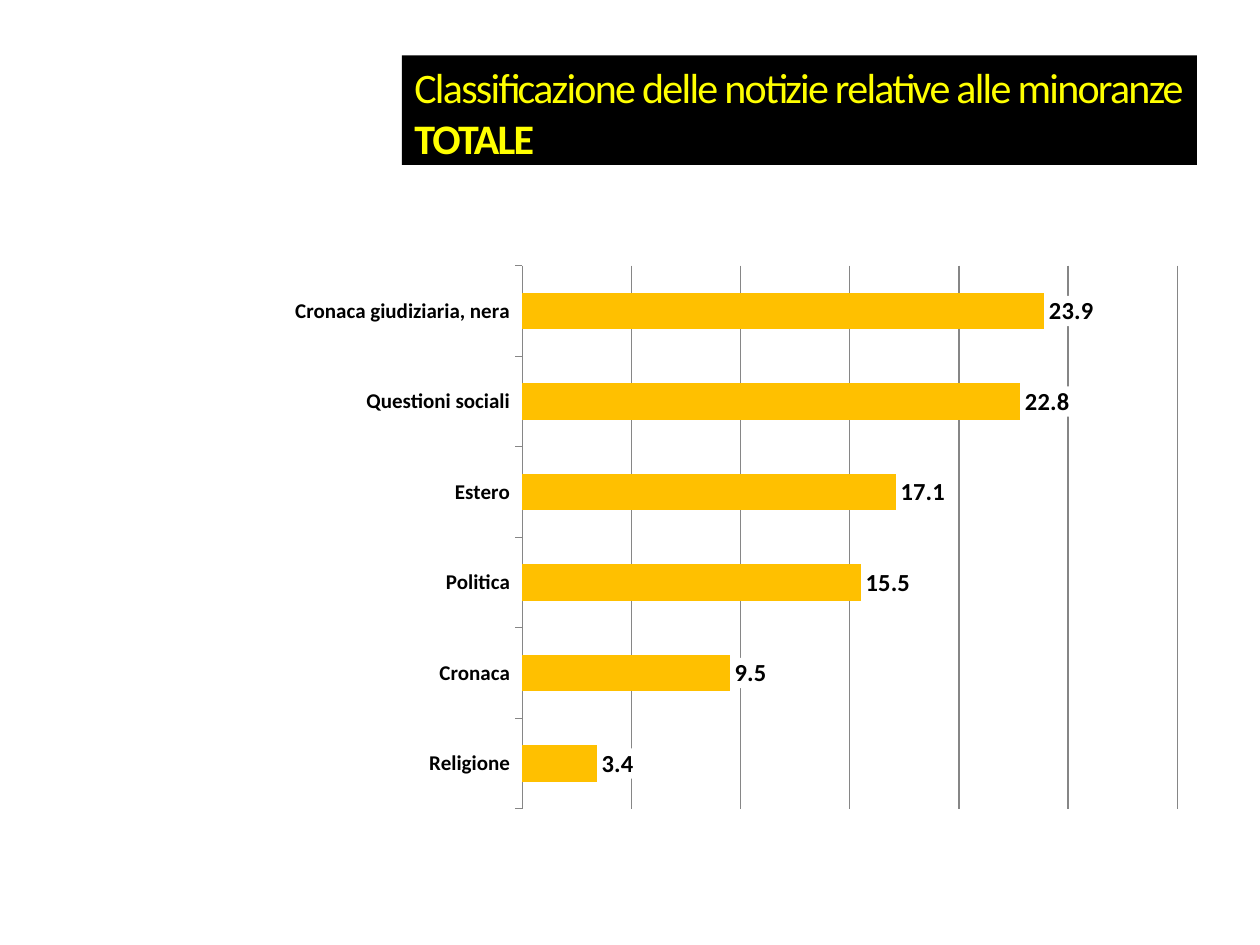
from dataclasses import dataclass

from lxml import etree
from pptx import Presentation
from pptx.chart.data import CategoryChartData
from pptx.dml.color import RGBColor
from pptx.enum.chart import XL_CHART_TYPE as ChartType
from pptx.enum.chart import XL_LABEL_POSITION as LabelPosition
from pptx.enum.chart import XL_TICK_MARK as TickMark
from pptx.enum.shapes import MSO_SHAPE as ShapeType
from pptx.enum.text import MSO_ANCHOR as Anchor
from pptx.enum.text import PP_ALIGN as Align
from pptx.oxml import parse_xml
from pptx.oxml.ns import nsdecls, qn
from pptx.util import Inches, Pt


@dataclass(frozen=True)
class Theme:
    font: str = "Calibri"
    black: RGBColor = RGBColor(0, 0, 0)
    yellow: RGBColor = RGBColor(255, 255, 0)
    amber: RGBColor = RGBColor(255, 192, 0)
    grey: RGBColor = RGBColor(134, 134, 134)
    label_fill: str = "FFFFFF"
    title_size: Pt = Pt(24)
    chart_size: Pt = Pt(10)
    category_size: Pt = Pt(12)
    value_size: Pt = Pt(14)
    hairline: Pt = Pt(0.75)


THEME = Theme()
NEWS_SHARES = {
    "Cronaca giudiziaria, nera": 23.9,
    "Questioni sociali": 22.8,
    "Estero": 17.1,
    "Politica": 15.5,
    "Cronaca": 9.5,
    "Religione": 3.4,
}


def add_title(slide, box):
    banner = slide.shapes.add_shape(ShapeType.RECTANGLE, *box)
    banner.shadow.inherit = False
    banner.fill.solid()
    banner.fill.fore_color.rgb = THEME.black
    banner.line.fill.background()
    frame = banner.text_frame
    frame.word_wrap = True
    frame.vertical_anchor = Anchor.TOP
    frame.margin_right = 0
    paragraph = frame.paragraphs[0]
    paragraph.text = "Classificazione delle notizie relative alle minoranze\vTOTALE"
    paragraph.alignment = Align.LEFT
    for run in paragraph.runs:
        run.font.name = THEME.font
        run.font.size = THEME.title_size
        run.font.color.rgb = THEME.yellow
        run.font._element.set("spc", "-100")
    paragraph.runs[-1].font.bold = True


def set_plot_layout(chart, **fractions):
    """Fix the inner plot area as fractions of the chart's box."""
    plot_area = chart._chartSpace.chart.plotArea
    for old_layout in plot_area.findall(qn("c:layout")):
        plot_area.remove(old_layout)
    layout = etree.Element(qn("c:layout"))
    manual = etree.SubElement(layout, qn("c:manualLayout"))
    settings = {"layoutTarget": "inner", "xMode": "edge", "yMode": "edge", **fractions}
    for name, value in settings.items():
        etree.SubElement(manual, qn(f"c:{name}")).set("val", str(value))
    plot_area.insert(0, layout)


def format_value_labels(plot):
    plot.has_data_labels = True
    labels = plot.data_labels
    labels.show_value = True
    labels.number_format = "0.0"
    labels.number_format_is_linked = False
    labels.position = LabelPosition.OUTSIDE_END
    labels.font.name = THEME.font
    labels.font.size = THEME.value_size
    labels.font.bold = True
    labels.font.color.rgb = THEME.black
    fill = parse_xml(
        f'<c:spPr {nsdecls("c", "a")}><a:solidFill>'
        f'<a:srgbClr val="{THEME.label_fill}"/></a:solidFill></c:spPr>'
    )
    labels._element.find(qn("c:txPr")).addprevious(fill)


def format_axes(chart):
    categories = chart.category_axis
    categories.reverse_order = True
    categories.major_tick_mark = TickMark.OUTSIDE
    categories.tick_labels.font.size = THEME.category_size
    categories.tick_labels.font.bold = True
    values = chart.value_axis
    values.minimum_scale = 0
    values.maximum_scale = 30
    values.major_unit = 5
    values.tick_labels.number_format = "0.0"
    values.tick_labels.number_format_is_linked = False
    values.has_major_gridlines = True
    values.visible = False
    for line in (categories.format.line, values.major_gridlines.format.line):
        line.color.rgb = THEME.grey
        line.width = THEME.hairline


def add_news_chart(slide, box):
    data = CategoryChartData(number_format="0.0")
    data.categories = list(NEWS_SHARES)
    data.add_series("Series 1", list(NEWS_SHARES.values()))
    chart = slide.shapes.add_chart(ChartType.BAR_CLUSTERED, *box, data).chart
    chart.has_title = False
    chart.has_legend = False
    chart.font.name = THEME.font
    chart.font.size = THEME.chart_size
    chart.font.color.rgb = THEME.black
    plot = chart.plots[0]
    plot.gap_width = 150
    plot.vary_by_categories = False
    bars = plot.series[0].format.fill
    bars.solid()
    bars.fore_color.rgb = THEME.amber
    format_axes(chart)
    format_value_labels(plot)
    set_plot_layout(chart, x=0.27, y=0.02, w=0.71, h=0.96)


def main():
    presentation = Presentation()
    presentation.slide_width = Inches(10)
    presentation.slide_height = Inches(7.5)
    slide = presentation.slides.add_slide(presentation.slide_layouts[6])
    add_title(slide, [Inches(n) for n in (3.19, 0.44, 6.31, 0.87)])
    add_news_chart(slide, [Inches(n) for n in (2.17, 2.02, 7.32, 4.49)])
    presentation.save("out.pptx")


if __name__ == "__main__":
    main()
